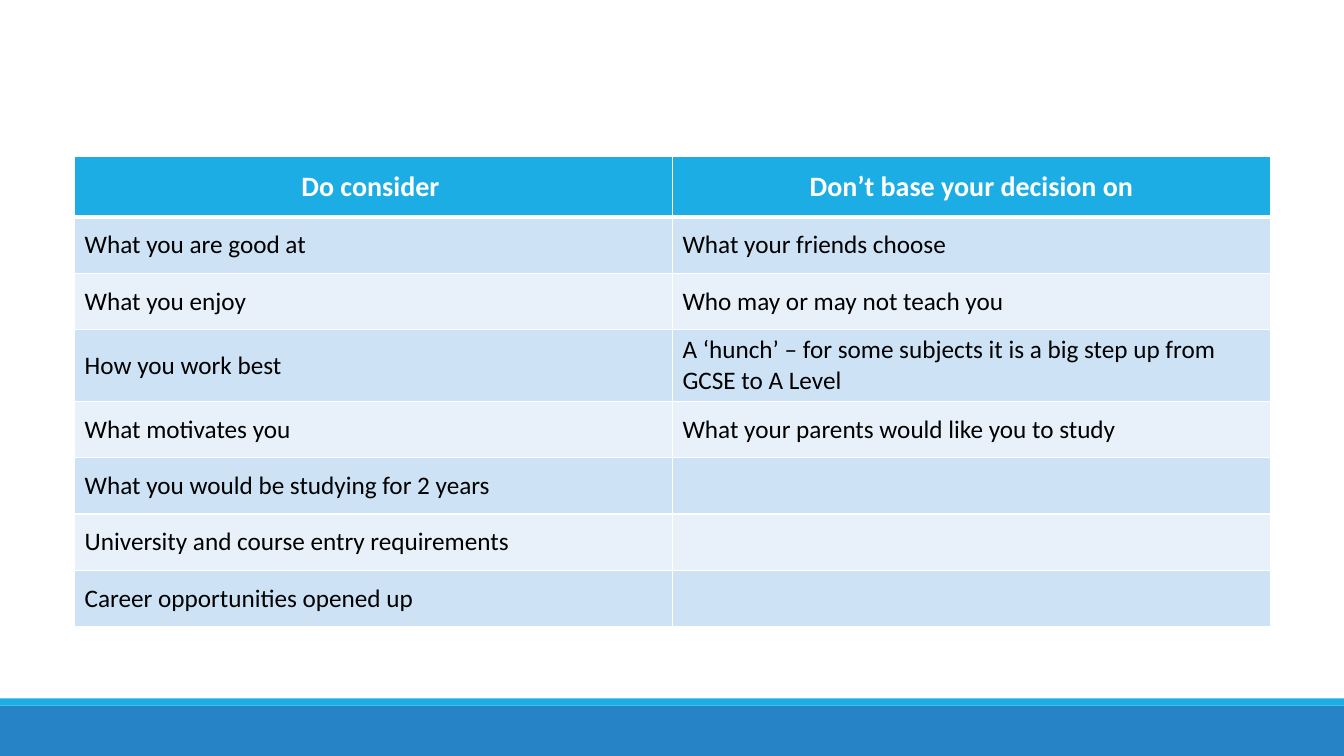
from lxml.etree import SubElement
from pptx import Presentation
from pptx.dml.color import RGBColor
from pptx.enum.shapes import MSO_SHAPE
from pptx.enum.text import MSO_ANCHOR, PP_ALIGN
from pptx.oxml.ns import qn
from pptx.util import Emu, Pt

WHITE = RGBColor(0xFF, 0xFF, 0xFF)
BLACK = RGBColor(0x00, 0x00, 0x00)
SKY = RGBColor(0x1C, 0xAD, 0xE4)
BLUE = RGBColor(0x26, 0x83, 0xC6)
BAND_DARK = RGBColor(0xCD, 0xE3, 0xF5)
BAND_LIGHT = RGBColor(0xE8, 0xF1, 0xFA)

FONT = "Calibri"
SLIDE_WIDTH, SLIDE_HEIGHT = 1333, 750
HEADER_HEIGHT, ROW_HEIGHT = 60, 56
STRIPE_HEIGHT = 7

ADVICE = [
    ("Do consider ", "Don’t base your decision on"),
    ("What you are good at", "What your friends choose"),
    ("What you enjoy", "Who may or may not teach you"),
    ("How you work best",
     "A ‘hunch’ – for some subjects it is a big step up from GCSE to A Level"),
    ("What motivates you", "What your parents would like you to study"),
    ("What you would be studying for 2 years", ""),
    ("University and course entry requirements", ""),
    ("Career opportunities opened up", ""),
]


def px(length):
    return Emu(length * 9144)


def add_bar(slide, left, top, width, height, color):
    bar = slide.shapes.add_shape(
        MSO_SHAPE.RECTANGLE, px(left), px(top), px(width), px(height))
    bar.shadow.inherit = False
    bar.fill.solid()
    bar.fill.fore_color.rgb = color
    bar.line.fill.background()


def add_footer(slide, left, top, width, height):
    add_bar(slide, left, top + STRIPE_HEIGHT, width, height - STRIPE_HEIGHT, BLUE)
    add_bar(slide, left, top, width, STRIPE_HEIGHT, SKY)


def set_borders(cell, **points):
    properties = cell._tc.get_or_add_tcPr()
    for side, width in points.items():
        border = SubElement(properties, qn(f"a:ln{side}"), w=str(Pt(width)))
        paint = SubElement(border, qn("a:solidFill"))
        SubElement(paint, qn("a:srgbClr"), val=str(WHITE))


def fill_cell(cell, wording, row):
    header = row == 0
    set_borders(cell, L=1, R=1, T=3 if row == 1 else 1, B=3 if header else 1)
    cell.fill.solid()
    band = BAND_DARK if row % 2 else BAND_LIGHT
    cell.fill.fore_color.rgb = SKY if header else band
    cell.vertical_anchor = MSO_ANCHOR.MIDDLE
    cell.text_frame.text = wording
    paragraph = cell.text_frame.paragraphs[0]
    paragraph.alignment = PP_ALIGN.CENTER if header else PP_ALIGN.LEFT
    for run in paragraph.runs:
        run.font.name = FONT
        run.font.size = Pt(20 if header else 18)
        run.font.bold = header
        run.font.color.rgb = WHITE if header else BLACK


def add_advice_table(slide, left, top, width):
    height = HEADER_HEIGHT + ROW_HEIGHT * (len(ADVICE) - 1)
    table = slide.shapes.add_table(
        len(ADVICE), 2, px(left), px(top), px(width), px(height)).table
    for column in table.columns:
        column.width = px(width // 2)
    for row, wordings in enumerate(ADVICE):
        table.rows[row].height = px(ROW_HEIGHT if row else HEADER_HEIGHT)
        for column, wording in enumerate(wordings):
            fill_cell(table.cell(row, column), wording, row)


def main():
    deck = Presentation()
    deck.slide_width, deck.slide_height = px(SLIDE_WIDTH), px(SLIDE_HEIGHT)
    slide = deck.slides.add_slide(deck.slide_layouts[6])
    add_footer(slide, 0, 693, SLIDE_WIDTH, SLIDE_HEIGHT - 693)
    add_advice_table(slide, 74, 155, 1186)
    deck.save("out.pptx")


if __name__ == "__main__":
    main()
